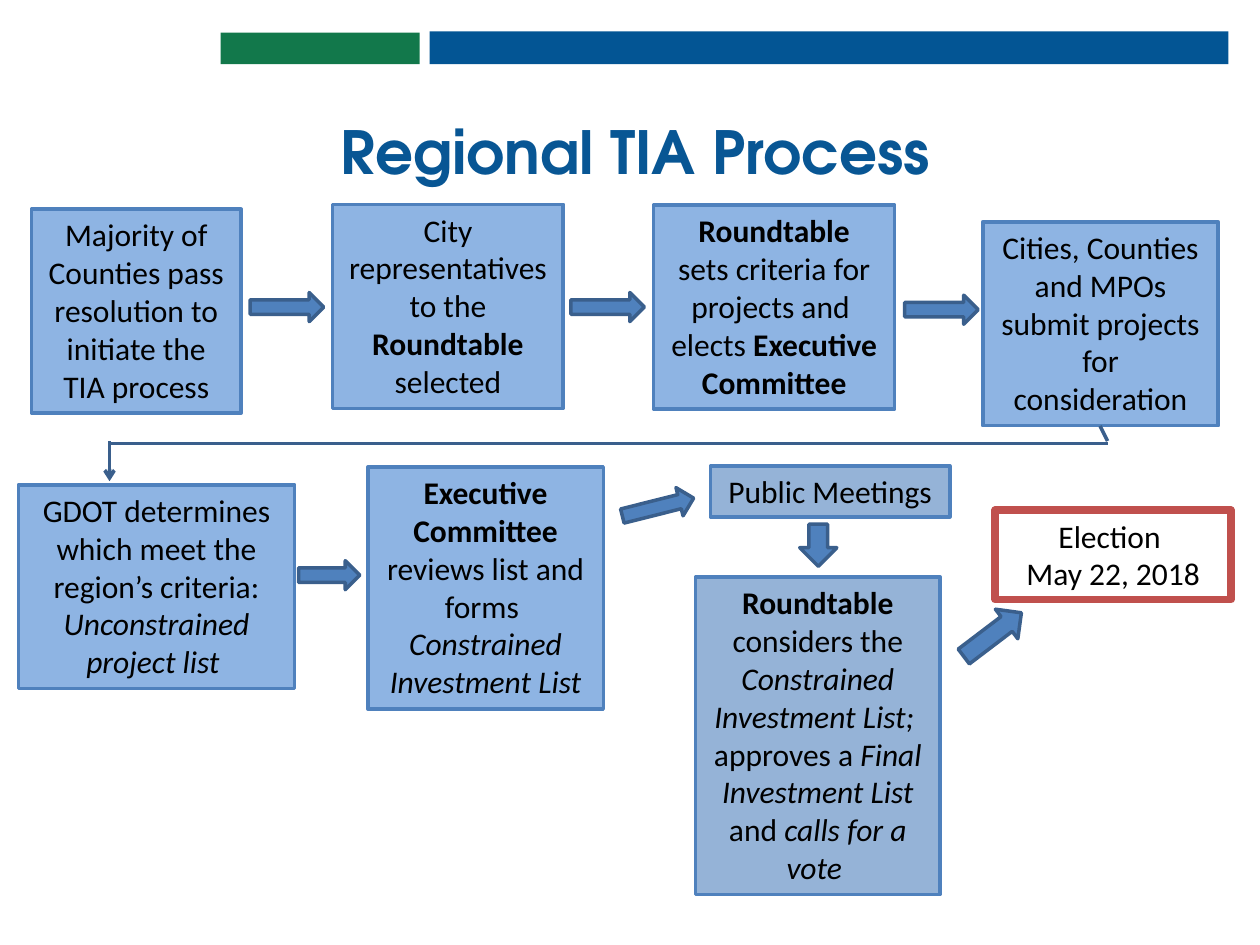
from lxml import etree
from pptx import Presentation
from pptx.dml.color import RGBColor
from pptx.enum.shapes import MSO_CONNECTOR, MSO_SHAPE
from pptx.enum.text import MSO_ANCHOR, MSO_AUTO_SIZE, PP_ALIGN
from pptx.oxml.ns import qn
from pptx.util import Pt

RECTANGLE = MSO_SHAPE.RECTANGLE
RIGHT, DOWN = MSO_SHAPE.RIGHT_ARROW, MSO_SHAPE.DOWN_ARROW
STRAIGHT = MSO_CONNECTOR.STRAIGHT
CENTER = PP_ALIGN.CENTER

COLORS = {
    "banner blue": "035594", "banner green": "12784B", "title": "085694",
    "step": "8EB4E3", "review": "95B3D7", "election": "FFFFFF",
    "border": "4F81BD", "alert": "C0504D",
    "arrow": "4F81BD", "arrow edge": "3A5F8C", "text": "000000",
}
PLAIN, BOLD, ITALIC = {}, {"bold": True}, {"italic": True}

TITLE = "Regional TIA Process"
TITLE_FRAME = (72.7, 65.5, 581, 45.4)
TITLE_FONT = {"name": "TeX Gyre Adventor", "size": Pt(34), "bold": True}
BODY_FONT = {"name": "Calibri", "size": Pt(18)}

BANNERS = [
    ((245.5, 18, 456.5, 18.7), "banner blue"),
    ((126, 18.7, 113.8, 18), "banner green"),
]

# frame (left, top, width, height), fill, border, border width, paragraphs of runs
BOXES = [
    ((18, 119.5, 119.8, 116.6), "step", "border", 2, [
        [("Majority of Counties pass resolution to initiate the TIA process", PLAIN)]]),
    ((190.1, 116.8, 131.8, 116.6), "step", "border", 2, [
        [("City representatives to the ", PLAIN), ("Roundtable", BOLD),
         (" selected", PLAIN)]]),
    ((373.5, 117.2, 137.8, 116.6), "step", "border", 2, [
        [("Roundtable", BOLD)],
        [("sets criteria for projects and ", PLAIN)],
        [("elects ", PLAIN), ("Executive Committee", BOLD)]]),
    ((561.6, 126.7, 134.6, 116.6), "step", "border", 2, [
        [("Cities, Counties and MPOs submit projects for consideration", PLAIN)]]),
    ((10.6, 277, 157.7, 116.6), "step", "border", 2, [
        [("GDOT determines which meet the region’s criteria: ", PLAIN),
         ("Unconstrained project list ", ITALIC)]]),
    ((210.2, 266.9, 134.6, 138.2), "step", "border", 2, [
        [("Executive Committee", BOLD), (" reviews list and forms ", PLAIN)],
        [("Constrained Investment List", ITALIC)]]),
    ((406, 266.2, 136.8, 29.1), "review", "border", 2, [
        [("Public Meetings", PLAIN)]]),
    ((397.4, 329.8, 139.9, 181.4), "review", "border", 2, [
        [("Roundtable ", BOLD), ("considers the ", PLAIN),
         ("Constrained Investment List; ", ITALIC)],
        [("approves a ", PLAIN), ("Final Investment List ", ITALIC),
         ("and ", PLAIN), ("calls for a vote ", ITALIC)]]),
    ((568.8, 291.6, 134.6, 51), "election", "alert", 4.5, [
        [("Election ", PLAIN)], [("May 22, 2018", PLAIN)]]),
]

# preset, frame, rotation
ARROWS = [
    (RIGHT, (143, 167.2, 42, 16.6), 0),
    (RIGHT, (326.2, 167.2, 42, 16.6), 0),
    (RIGHT, (517, 168.7, 42, 16.6), 0),
    (RIGHT, (170.6, 320.4, 35, 16.6), 0),
    (RIGHT, (355, 281.5, 42, 16.6), 345.9),
    (DOWN, (457, 299.5, 21.2, 24.1), 0),
    (DOWN, (556.6, 342, 21.2, 41.3), 232.8),
]

# start, end, arrowhead at the end
LINKS = [
    ((632.9, 252), (628.6, 243.4), False),
    ((62.2, 253.4), (632.9, 253.4), False),
    ((62.6, 252), (62.6, 275), True),
]


def color(name):
    return RGBColor.from_string(COLORS[name])


def set_font(font, values, color_name):
    for name, value in values.items():
        setattr(font, name, value)
    font.color.rgb = color(color_name)


def add_block(page, preset, frame, fill, edge=None, width=0):
    shape = page.shapes.add_shape(preset, *map(Pt, frame))
    shape.shadow.inherit = False
    shape.fill.solid()
    shape.fill.fore_color.rgb = color(fill)
    if edge:
        shape.line.color.rgb = color(edge)
        shape.line.width = Pt(width)
    else:
        shape.line.fill.background()
    return shape


def write_paragraphs(box, paragraphs):
    frame = box.text_frame
    frame.word_wrap = True
    frame.auto_size = MSO_AUTO_SIZE.SHAPE_TO_FIT_TEXT
    frame.vertical_anchor = MSO_ANCHOR.TOP
    for index, spans in enumerate(paragraphs):
        para = frame.add_paragraph() if index else frame.paragraphs[0]
        para.alignment = CENTER
        for text, style in spans:
            span = para.add_run()
            span.text = text
            set_font(span.font, BODY_FONT | style, "text")


def add_link(page, start, end, has_head):
    link = page.shapes.add_connector(STRAIGHT, *map(Pt, start + end))
    link.line.color.rgb = color("arrow edge")
    link.line.width = Pt(2)
    if has_head:
        etree.SubElement(link.line._get_or_add_ln(), qn("a:tailEnd"), type="arrow")
    etree.SubElement(link._element.spPr, qn("a:effectLst"))


def set_title(page):
    title = page.shapes.title
    title.left, title.top, title.width, title.height = map(Pt, TITLE_FRAME)
    title.text_frame.text = TITLE
    title.text_frame.vertical_anchor = MSO_ANCHOR.BOTTOM
    para = title.text_frame.paragraphs[0]
    para.alignment = CENTER
    para.line_spacing = 0.9
    set_font(para.runs[0].font, TITLE_FONT, "title")


def main():
    deck = Presentation()
    deck.slide_width, deck.slide_height = Pt(720), Pt(540)
    page = deck.slides.add_slide(deck.slide_layouts[5])
    set_title(page)
    for frame, fill in BANNERS:
        add_block(page, RECTANGLE, frame, fill)
    for frame, fill, edge, width, paragraphs in BOXES:
        box = add_block(page, RECTANGLE, frame, fill, edge, width)
        write_paragraphs(box, paragraphs)
    for preset, frame, rotation in ARROWS:
        arrow = add_block(page, preset, frame, "arrow", "arrow edge", 2)
        arrow.rotation = rotation
    for link in LINKS:
        add_link(page, *link)
    deck.save("out.pptx")


if __name__ == "__main__":
    main()
